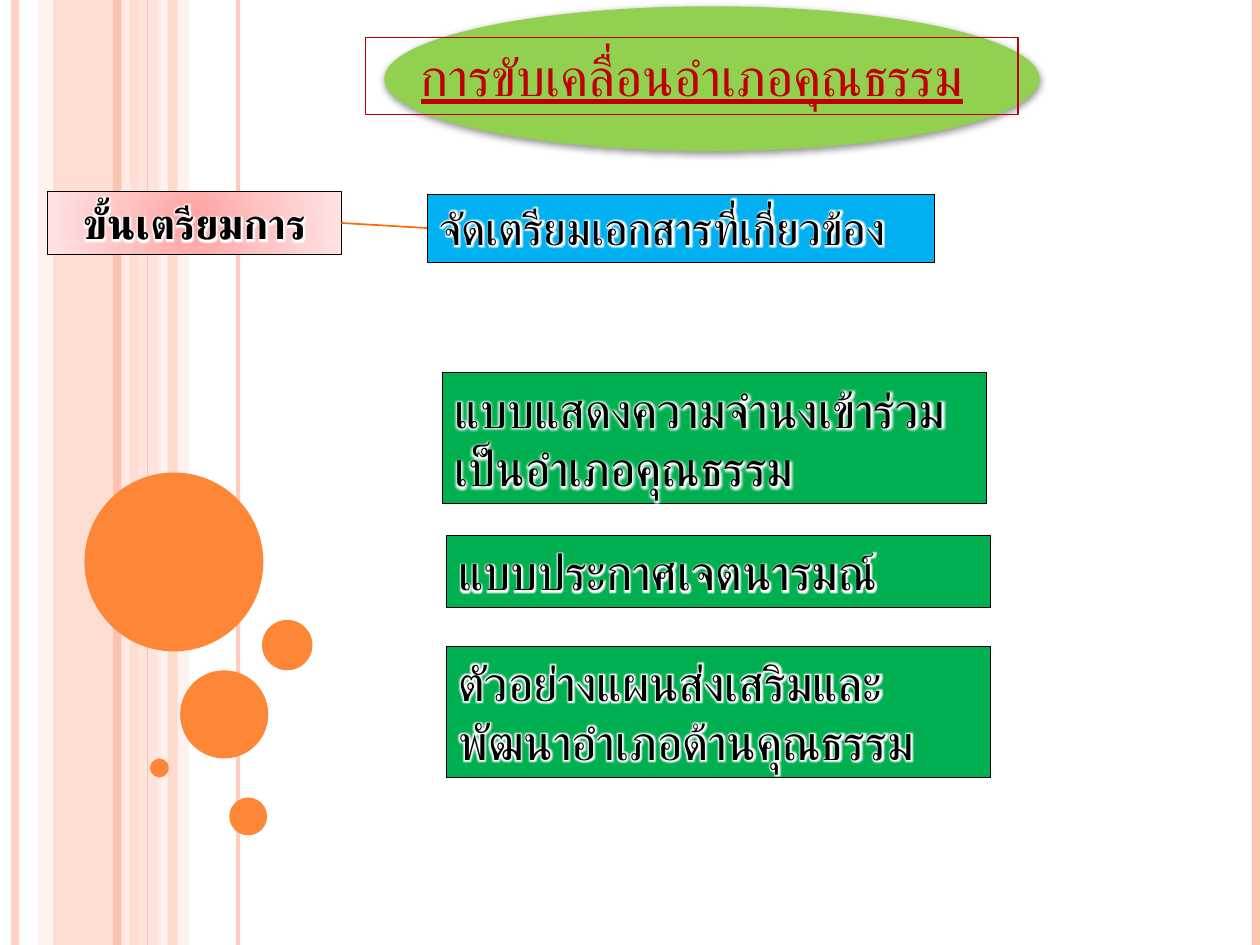
from lxml import etree
from pptx import Presentation
from pptx.dml.color import RGBColor
from pptx.enum.shapes import MSO_CONNECTOR, MSO_SHAPE
from pptx.enum.text import MSO_AUTO_SIZE, PP_ALIGN
from pptx.oxml.ns import qn
from pptx.util import Inches, Pt

RECTANGLE, OVAL = MSO_SHAPE.RECTANGLE, MSO_SHAPE.OVAL
STRAIGHT = MSO_CONNECTOR.STRAIGHT
LEFT, CENTER = PP_ALIGN.LEFT, PP_ALIGN.CENTER
GROW = MSO_AUTO_SIZE.SHAPE_TO_FIT_TEXT
LEFT_SIDE, RIGHT_SIDE = 1, 3

# The page is a grid of square cells; all lengths count cells.
COLUMNS, ROWS, CELL = 100, 75, 0.1
FONT = "Calibri"
BLACK, WHITE, ORANGE, PEACH = "000000", "FFFFFF", "FE8637", "FEC3AE"
BLUSH, SHELL, RED, GREEN = "FFD9CE", "FFEDE8", "C00000", "00B050"

# left, width, colour, opacity
BANDS = [(4.2, 6.7, PEACH, 54), (3, 1.1, BLUSH, 36), (10.8, 2, BLUSH, 70),
         (12.5, 2.5, SHELL, 71)]
FRONT_BAND = (13.3, 0.8, PEACH, 51)
# column, points, colour, opacity
STRIPES = [(1.2, 4.5, PEACH, 73), (10, 4.5, SHELL, 83), (9.3, 4.5, PEACH, 100),
           (18.9, 2.25, PEACH, 82), (11.7, 0.75, PEACH, 100),
           (99.7, 4.5, PEACH, 100)]
# left, top, diameter
BUBBLES = [(6.7, 37.5, 14.2), (14.3, 53.2, 7), (11.9, 60.2, 1.5),
           (18.2, 63.3, 3), (20.8, 49.2, 4)]
DOCUMENTS = [
    ("แบบแสดงความจำนงเข้าร่วมเป็นอำเภอคุณธรรม", (35.1, 29.6, 43.2, 10.4)),
    ("แบบประกาศเจตนารมณ์", (35.4, 42.5, 43.2, 5.7)),
    ("ตัวอย่างแผนส่งเสริมและพัฒนาอำเภอด้านคุณธรรม", (35.4, 51.3, 43.2, 10.4)),
]


def cells(*counts):
    return [Inches(count * CELL) for count in counts]


def paint(color_format, color):
    color_format.rgb = RGBColor.from_string(color)


def node(parent, tag, **attributes):
    values = {name: str(value) for name, value in attributes.items()}
    return etree.SubElement(parent, qn("a:" + tag), values)


def color_node(parent, color, opacity=100):
    color_element = node(parent, "srgbClr", val=color)
    if opacity < 100:
        node(color_element, "alpha", val=opacity * 1000)


def set_opacity(properties, opacity):
    if opacity < 100:
        color_element = next(properties.iter(qn("a:srgbClr")))
        node(color_element, "alpha", val=opacity * 1000)


def add_plain(page, kind, area, color, opacity=100):
    shape = page.shapes.add_shape(kind, *cells(*area))
    shape.shadow.inherit = False
    shape.fill.solid()
    paint(shape.fill.fore_color, color)
    shape.line.fill.background()
    set_opacity(shape.fill._xPr, opacity)
    return shape


def add_band(page, left, width, color, opacity):
    add_plain(page, RECTANGLE, (left, 0, width, ROWS), color, opacity)


def add_line(page, start, end, color, points, opacity=100):
    line = page.shapes.add_connector(STRAIGHT, *cells(*start, *end))
    paint(line.line.color, color)
    line.line.width = Pt(points)
    properties = line._element.spPr
    set_opacity(properties, opacity)
    node(properties, "effectLst")
    return line


def add_drop_shadow(shape):
    effects = shape._element.spPr.find(qn("a:effectLst"))
    shadow = node(effects, "outerShdw", blurRad=Pt(4), dist=Pt(1.6),
                  dir=90 * 60000, rotWithShape=0)
    color_node(shadow, BLACK, 42)


def fill_radial(shape, stops):
    """Replace the solid fill by a gradient that spreads from the centre."""
    properties = shape._element.spPr
    solid = properties.find(qn("a:solidFill"))
    gradient = etree.Element(qn("a:gradFill"), rotWithShape="1")
    stop_list = node(gradient, "gsLst")
    for position, color in stops:
        color_node(node(stop_list, "gs", pos=position * 1000), color)
    center = node(gradient, "path", path="circle")
    node(center, "fillToRect", l=50000, t=50000, r=50000, b=50000)
    properties.replace(solid, gradient)


def add_glow(span):
    effects = etree.Element(qn("a:effectLst"))
    color_node(node(effects, "glow", rad=Pt(5)), WHITE)
    span.font._element.find(qn("a:latin")).addprevious(effects)


def add_text_box(page, text, area, size, fill=None, border=BLACK, points=0.5,
                 color=BLACK, align=LEFT, glow=True, **extra):
    box = page.shapes.add_textbox(*cells(*area))
    if fill:
        box.fill.solid()
        paint(box.fill.fore_color, fill)
    paint(box.line.color, border)
    box.line.width = Pt(points)
    frame = box.text_frame
    frame.word_wrap = True
    frame.auto_size = GROW
    para = frame.paragraphs[0]
    para.alignment = align
    span = para.add_run()
    span.text = text
    paint(span.font.color, color)
    for name, value in {"name": FONT, "size": Pt(size), **extra}.items():
        setattr(span.font, name, value)
    node(span.font._element, "cs", typeface=FONT)
    if glow:
        add_glow(span)
    return box


def add_background(page):
    for band in BANDS:
        add_band(page, *band)
    for column, points, color, opacity in STRIPES:
        add_line(page, (column, 0), (column, ROWS), color, points, opacity)
    add_band(page, *FRONT_BAND)
    for left, top, diameter in BUBBLES:
        add_plain(page, OVAL, (left, top, diameter, diameter), ORANGE)


def main():
    deck = Presentation()
    deck.slide_width, deck.slide_height = cells(COLUMNS, ROWS)
    page = deck.slides.add_slide(deck.slide_layouts[6])
    add_background(page)

    add_drop_shadow(add_plain(page, OVAL, (30.5, 0.5, 52, 11.5), "92D050"))
    add_text_box(page, "การขับเคลื่อนอำเภอคุณธรรม", (29, 3, 51.8, 6.1), 30,
                 border=RED, points=0.75, color=RED, align=CENTER, glow=False,
                 underline=True)

    step = add_text_box(page, "ขั้นเตรียมการ", (3.8, 15.2, 23.3, 5), 24,
                        fill="FFC5C5", align=CENTER, bold=True)
    fill_radial(step, [(0, "FFA0A0"), (50, "FFC5C5"), (100, "FFE3E3")])
    task = add_text_box(page, "จัดเตรียมเอกสารที่เกี่ยวข้อง",
                        (33.9, 15.4, 40.3, 5.4), 26, fill="00B0F0")
    link = add_line(page, (27.1, 18), (33.9, 18.2), "FF6B0A", 1)
    link.begin_connect(step, RIGHT_SIDE)
    link.end_connect(task, LEFT_SIDE)

    for text, area in DOCUMENTS:
        add_text_box(page, text, area, 28, fill=GREEN)

    deck.save("out.pptx")


if __name__ == "__main__":
    main()
